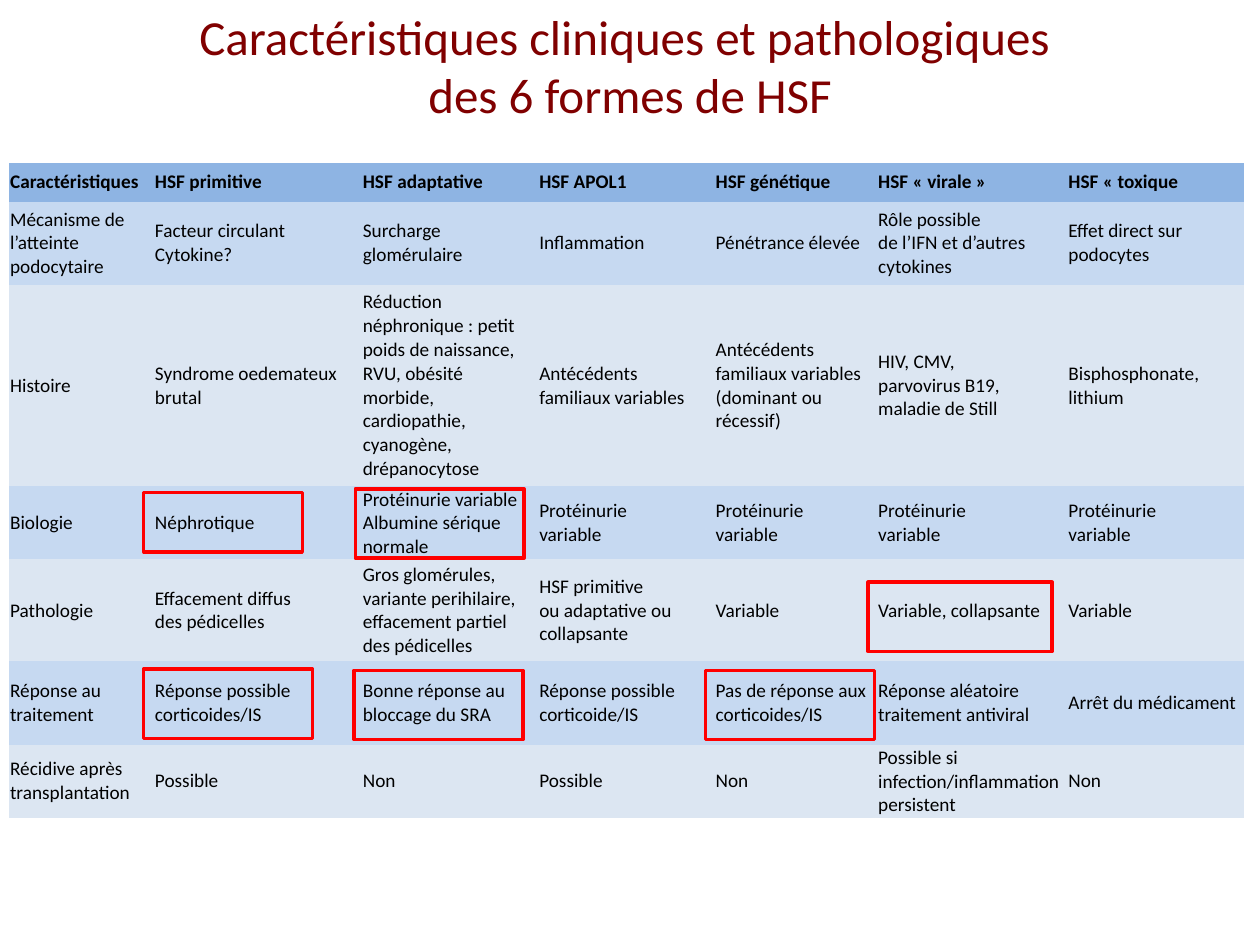
from pptx import Presentation
from pptx.dml.color import RGBColor
from pptx.enum.shapes import MSO_SHAPE
from pptx.enum.text import MSO_ANCHOR, PP_ALIGN
from pptx.oxml.ns import qn
from pptx.util import Inches, Pt

RECTANGLE = MSO_SHAPE.RECTANGLE
MIDDLE = MSO_ANCHOR.MIDDLE
CENTER = PP_ALIGN.CENTER

COLORS = {
    "title": "800000",
    "text": "000000",
    "header": "8EB4E3",
    "odd_row": "C6D9F1",
    "even_row": "DCE6F2",
    "highlight": "FF0000",
}
PLAIN_TABLE_STYLE = "{2D5ABB26-0587-4C30-8999-92F81FD0307C}"

TITLE = "Caractéristiques cliniques et pathologiques \vdes 6 formes de HSF"
COLUMN_WIDTHS = [1.15, 1.65, 1.4, 1.4, 1.29, 1.51, 1.4]
ROW_HEIGHTS = [0.31, 0.66, 1.6, 0.58, 0.81, 0.66, 0.58]
PROTEINURIA = "Protéinurie\nvariable"
ROWS = [
    ["Caractéristiques", "HSF primitive", "HSF adaptative", "HSF APOL1",
     "HSF génétique", "HSF « virale »", "HSF « toxique"],
    ["Mécanisme de l’atteinte\npodocytaire", "Facteur circulant\nCytokine?",
     "Surcharge glomérulaire", "Inflammation", "Pénétrance élevée",
     "Rôle possible\nde l’IFN et d’autres cytokines",
     "Effet direct sur podocytes"],
    ["Histoire", "Syndrome oedemateux brutal",
     "Réduction néphronique : petit poids de naissance, RVU, obésité morbide, "
     "cardiopathie, cyanogène, drépanocytose",
     "Antécédents familiaux variables",
     "Antécédents familiaux variables (dominant ou récessif)",
     "HIV, CMV,\nparvovirus B19, maladie de Still", "Bisphosphonate, lithium"],
    ["Biologie", "Néphrotique", "Protéinurie variable\nAlbumine sérique normale"]
    + [PROTEINURIA] * 4,
    ["Pathologie", "Effacement diffus\ndes pédicelles",
     "Gros glomérules, variante perihilaire, effacement partiel des pédicelles",
     "HSF primitive\nou adaptative ou collapsante", "Variable",
     "Variable, collapsante", "Variable"],
    ["Réponse au traitement", "Réponse possible corticoides/IS",
     "Bonne réponse au bloccage du SRA", "Réponse possible corticoide/IS",
     "Pas de réponse aux corticoides/IS",
     "Réponse aléatoire traitement antiviral", "Arrêt du médicament"],
    ["Récidive après transplantation", "Possible", "Non", "Possible", "Non",
     "Possible si infection/inflammation persistent", "Non"],
]
# Left, top, width, height of each outlined finding
HIGHLIGHTS = [
    (1.14, 3.91, 1.26, 0.47),
    (2.82, 3.88, 1.34, 0.55),
    (6.89, 4.62, 1.46, 0.55),
    (1.14, 5.31, 1.34, 0.55),
    (2.81, 5.32, 1.34, 0.55),
    (5.6, 5.32, 1.34, 0.55),
]


class SlideBuilder:
    font = "Calibri"
    cell_margin = Inches(0.01)

    def __init__(self, slide):
        self.slide = slide

    def color(self, name):
        return RGBColor.from_string(COLORS[name])

    def format_text(self, text_frame, size, color, bold=False):
        for paragraph in text_frame.paragraphs:
            for run in paragraph.runs:
                run.font.name = self.font
                run.font.size = Pt(size)
                run.font.bold = bold
                run.font.color.rgb = self.color(color)

    def title(self, text, left, top, width, height):
        box = self.slide.shapes.add_textbox(
            Inches(left), Inches(top), Inches(width), Inches(height))
        text_frame = box.text_frame
        text_frame.word_wrap = True
        text_frame.vertical_anchor = MIDDLE
        text_frame.text = text
        text_frame.paragraphs[0].alignment = CENTER
        self.format_text(text_frame, 28, "title")

    def cell(self, cell, text, fill, bold):
        cell.margin_left = cell.margin_right = self.cell_margin
        cell.margin_top = cell.margin_bottom = self.cell_margin
        cell.vertical_anchor = MIDDLE
        cell.fill.solid()
        cell.fill.fore_color.rgb = self.color(fill)
        cell.text_frame.text = text
        self.format_text(cell.text_frame, 11, "text", bold)

    def table(self, rows, left, top, widths, heights):
        frame = self.slide.shapes.add_table(
            len(rows), len(widths), Inches(left), Inches(top),
            Inches(sum(widths)), Inches(sum(heights)))
        table = frame.table
        table.horz_banding = False
        table._tbl.tblPr.find(qn("a:tableStyleId")).text = PLAIN_TABLE_STYLE
        for column, width in zip(table.columns, widths):
            column.width = Inches(width)
        for index, (row, height) in enumerate(zip(table.rows, heights)):
            row.height = Inches(height)
            is_header = index == 0
            band = "odd_row" if index % 2 else "even_row"
            fill = "header" if is_header else band
            for cell, text in zip(row.cells, rows[index]):
                self.cell(cell, text, fill, is_header)

    def highlight(self, left, top, width, height):
        shape = self.slide.shapes.add_shape(
            RECTANGLE, Inches(left), Inches(top), Inches(width), Inches(height))
        shape.shadow.inherit = False
        shape.fill.background()
        shape.line.color.rgb = self.color("highlight")
        shape.line.width = Pt(2)


def main():
    presentation = Presentation()
    presentation.slide_width = Inches(10)
    presentation.slide_height = Inches(7.5)
    slide = presentation.slides.add_slide(presentation.slide_layouts[6])
    builder = SlideBuilder(slide)

    # Title
    builder.title(TITLE, 0, -0.11, 10, 1.25)

    # Comparison of the six forms
    builder.table(ROWS, 0.07, 1.29, COLUMN_WIDTHS, ROW_HEIGHTS)

    # Outlines around the key findings
    for bounds in HIGHLIGHTS:
        builder.highlight(*bounds)

    presentation.save("out.pptx")


if __name__ == "__main__":
    main()
